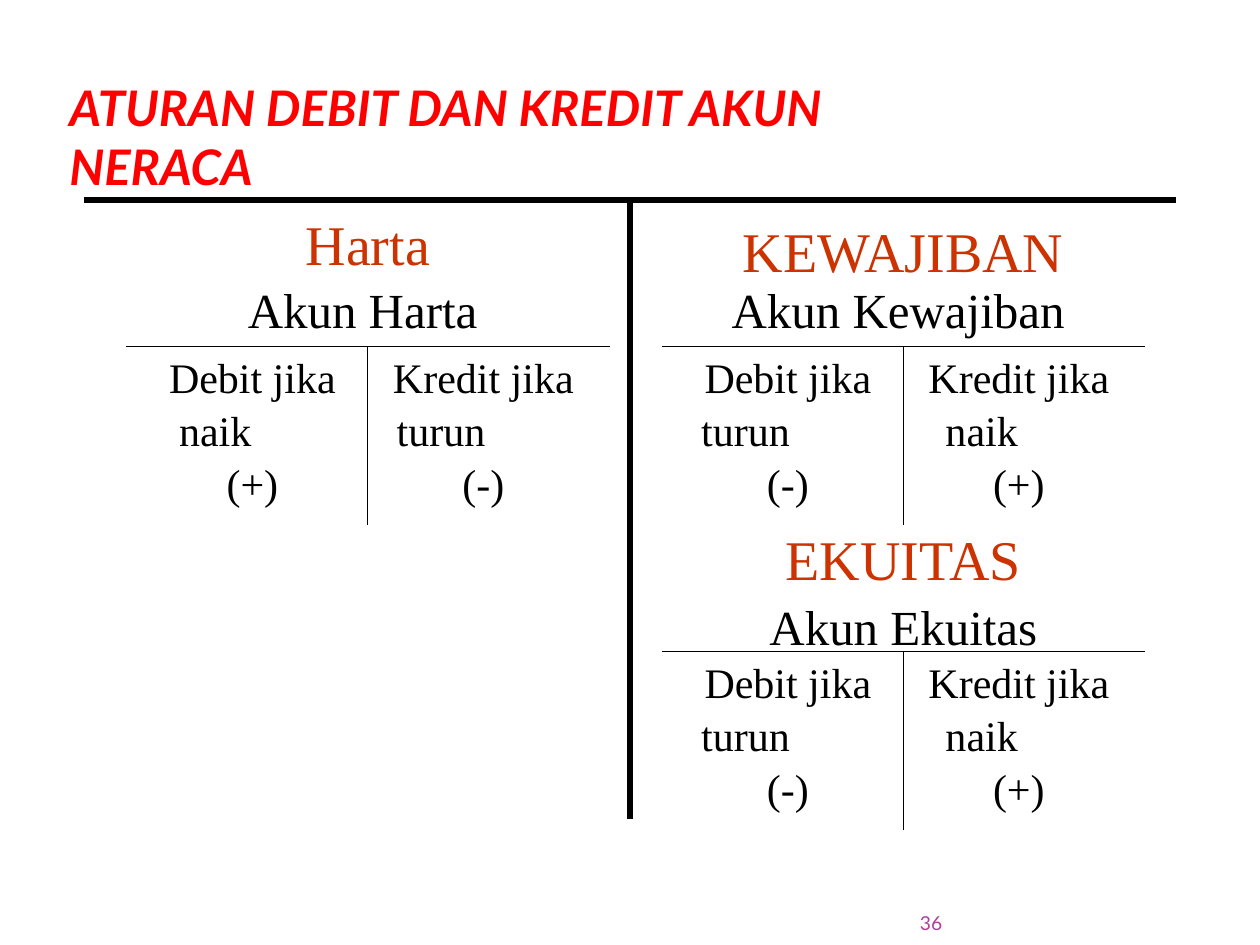
import pptx
import pptx.util
import pptx.dml.color
import pptx.enum.shapes
import pptx.enum.text
import pptx.oxml

Pt = pptx.util.Pt
RGB = pptx.dml.color.RGBColor
Align = pptx.enum.text.PP_ALIGN
Anchor = pptx.enum.text.MSO_ANCHOR

RED = RGB(0xFF, 0x00, 0x00)
RUST = RGB(0xCC, 0x33, 0x00)
PLUM = RGB(0xB1, 0x3F, 0x9A)
BLACK = RGB(0x00, 0x00, 0x00)
SERIF = "Times New Roman"
SANS = "Lato"
INDENT = {"naik": 17, "turun": 9.4}


def write(shape, text, size, color=BLACK, font=SERIF, align=Align.CENTER,
          anchor=Anchor.MIDDLE, inset=(7.2, 3.6), bold=False, italic=False,
          space=None):
    frame = shape.text_frame
    frame.auto_size = pptx.enum.text.MSO_AUTO_SIZE.NONE
    frame.word_wrap = True
    frame.vertical_anchor = anchor
    frame.margin_left = frame.margin_right = Pt(inset[0])
    frame.margin_top = frame.margin_bottom = Pt(inset[1])
    frame.text = text
    for para in frame.paragraphs:
        para.alignment = align
        para.line_spacing = space
        for run in para.runs:
            run.font.name = font
            run.font.size = Pt(size)
            run.font.bold = bold
            run.font.italic = italic
            run.font.color.rgb = color
    return frame


def label(slide, box, text, size, **style):
    shape = slide.shapes.add_textbox(*map(Pt, box))
    return write(shape, text, size, **style)


def line(slide, start, end, width):
    kind = pptx.enum.shapes.MSO_CONNECTOR.STRAIGHT
    rule = slide.shapes.add_connector(kind, *map(Pt, start + end))
    rule.line.color.rgb = BLACK
    rule.line.width = Pt(width)
    effect = pptx.oxml.parse_xml(
        '<a:effectLst xmlns:a='
        '"http://schemas.openxmlformats.org/drawingml/2006/main"/>')
    rule._element.spPr.append(effect)


def tee(slide, box, stem, width):
    left, top, wide, high = box
    line(slide, (left, top), (left + wide, top), width)
    line(slide, (stem, top), (stem, top + high), width)


def entry(slide, box, side, change, sign):
    frame = label(slide, box, f"{side} jika\n{change}\n({sign})", 24,
                  space=1.05)
    para = frame.paragraphs[1]
    para.alignment = Align.LEFT
    para._p.get_or_add_pPr().set("marL", str(Pt(INDENT[change])))


def account(slide, box, head, name, debit, credit, rise, drop, shift):
    left, top, wide, high = box
    stem = left + wide / 2
    label(slide, (left, top - rise, wide, 45), head, 32, color=RUST)
    label(slide, (left + shift, top - drop, wide, 41), name, 28)
    tee(slide, box, stem, 0.75)
    entry(slide, (stem - 132, top, 132, 93.6), "Debit", *debit)
    entry(slide, (stem, top, 132, 93.6), "Kredit", *credit)


def title(slide, box, text):
    shape = slide.shapes.title
    shape.left, shape.top, shape.width, shape.height = map(Pt, box)
    write(shape, text, 28, color=RED, font=SANS, align=Align.LEFT,
          anchor=Anchor.BOTTOM, inset=(3.6, 0), bold=True, italic=True)


def main():
    deck = pptx.Presentation()
    deck.slide_width, deck.slide_height = Pt(720), Pt(540)
    slide = deck.slides.add_slide(deck.slide_layouts[5])
    title(slide, (36, 21.6, 477.4, 90),
          "ATURAN DEBIT DAN KREDIT AKUN NERACA")
    tee(slide, (48, 114.3, 624, 353.7), 360, 3)
    up, down = ("naik", "+"), ("turun", "-")
    account(slide, (72, 198, 276.4, 102), "Harta", "Akun Harta",
            up, down, 81.4, 41.8, -3)
    account(slide, (378, 198, 276.4, 102), "KEWAJIBAN", "Akun Kewajiban",
            down, up, 77.8, 41.8, -3)
    account(slide, (378, 372.2, 276.4, 102), "EKUITAS", "Akun Ekuitas",
            down, up, 75.6, 35.2, 0)
    label(slide, (492.5, 516.2, 46, 18), "36", 11, color=PLUM, font=SANS,
          align=Align.RIGHT, anchor=Anchor.BOTTOM, inset=(0, 0))
    deck.save("out.pptx")


if __name__ == "__main__":
    main()
